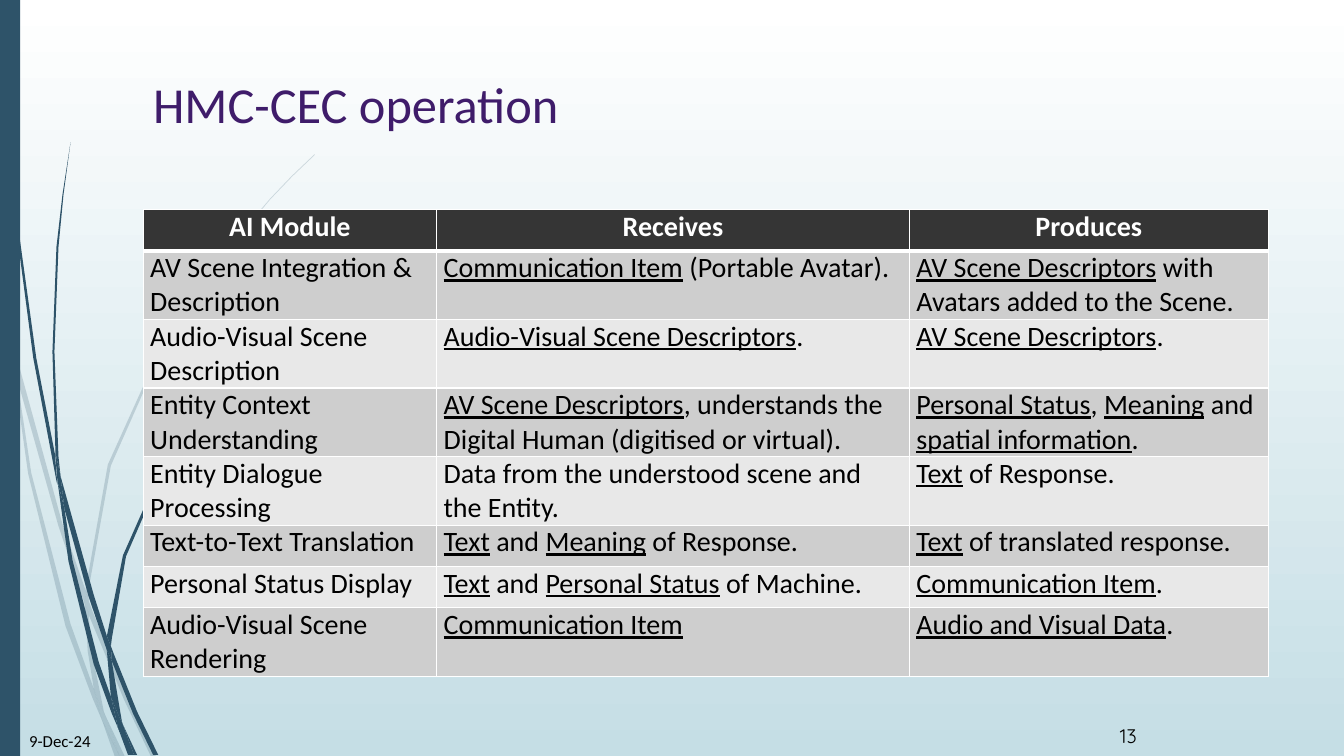
from lxml import etree
from pptx import Presentation
from pptx.dml.color import RGBColor
from pptx.enum.shapes import MSO_SHAPE
from pptx.enum.text import PP_ALIGN
from pptx.oxml.ns import qn
from pptx.util import Inches, Pt

RECTANGLE = MSO_SHAPE.RECTANGLE
LEFT, CENTER = PP_ALIGN.LEFT, PP_ALIGN.CENTER

WHITE = RGBColor(0xFF, 0xFF, 0xFF)
BLACK = RGBColor(0x00, 0x00, 0x00)
PALE_BLUE = RGBColor(0xC5, 0xDE, 0xE5)
TEAL = RGBColor(0x2E, 0x53, 0x69)
PURPLE = RGBColor(0x3F, 0x1C, 0x6A)
HEADER_GREY = RGBColor(0x35, 0x35, 0x35)
DARK_BAND = RGBColor(0xCE, 0xCE, 0xCE)
LIGHT_BAND = RGBColor(0xE8, 0xE8, 0xE8)

# Grass blade outlines, in hundredths of an inch
PALE_BLADES = [
    [(11, 350), (9, 322), (0, 282), (0, 299), (10, 344)],
    [(58, 522), (84, 599), (85, 586), (62, 520), (14, 345), (17, 376)],
    [(92, 607), (88, 596), (88, 610), (123, 694), (150, 751), (155, 751), (127, 692)],
    [(119, 751), (124, 751), (105, 711)],
    [(93, 683), (70, 619), (31, 469), (17, 376), (11, 350), (28, 470), (65, 621),
     (92, 693), (101, 714), (99, 707)],
    [(84, 599), (87, 646), (93, 683), (96, 692), (105, 711), (103, 706), (91, 646),
     (88, 610), (88, 608)],
    [(88, 584), (110, 462), (160, 349), (229, 245), (268, 198), (290, 175), (312, 154),
     (312, 153), (289, 175), (268, 197), (228, 244), (158, 348), (107, 461), (85, 584),
     (85, 586), (88, 596)],
    [(101, 714), (114, 751), (119, 751)],
    [(88, 608), (88, 610), (88, 596), (85, 586), (84, 599)],
    [(96, 692), (93, 683), (99, 707), (101, 714), (119, 751), (105, 711)],
]
DARK_BLADES = [
    [(7, 110), (17, 233), (33, 355), (56, 477), (57, 481), (55, 457), (55, 453),
     (36, 355), (19, 232), (8, 109), (5, 48), (4, 0), (3, 0), (4, 48)],
    [(88, 592), (106, 645), (106, 633), (106, 631), (93, 590), (60, 472), (64, 505)],
    [(113, 649), (110, 641), (111, 656), (132, 708), (152, 749), (157, 749), (136, 706)],
    [(110, 691), (98, 657), (72, 556), (64, 505), (57, 477), (68, 557), (93, 659),
     (111, 708), (117, 722), (116, 717)],
    [(60, 472), (58, 453), (54, 349), (58, 245), (63, 193), (70, 141), (62, 193),
     (56, 245), (52, 349), (55, 449)],
    [(133, 749), (136, 749), (122, 719)],
    [(57, 477), (64, 505), (60, 472), (55, 449), (55, 453)],
    [(111, 633), (125, 552), (158, 476), (205, 406), (231, 374), (245, 359), (261, 344),
     (260, 344), (245, 358), (231, 373), (204, 405), (156, 474), (122, 551), (106, 631),
     (110, 641)],
    [(117, 722), (127, 749), (131, 749)],
    [(106, 645), (110, 691), (116, 706), (122, 719), (121, 716), (111, 656), (109, 651)],
    [(106, 645), (109, 651), (111, 656), (110, 641), (106, 631), (106, 633)],
    [(116, 706), (110, 691), (116, 717), (117, 722), (130, 749), (133, 749), (122, 719)],
]

# Words between underscores are underlined
ROWS = [
    ("AI Module", "Receives", "Produces"),
    ("AV Scene Integration & Description", "_Communication Item_ (Portable Avatar).",
     "_AV Scene Descriptors_ with Avatars added to the Scene."),
    ("Audio-Visual Scene Description", "_Audio-Visual Scene Descriptors_.",
     "_AV Scene Descriptors_."),
    ("Entity Context Understanding",
     "_AV Scene Descriptors_, understands the Digital Human (digitised or virtual).",
     "_Personal Status_, _Meaning_ and _spatial information_."),
    ("Entity Dialogue Processing", "Data from the understood scene and the Entity.",
     "_Text_ of Response."),
    ("Text-to-Text Translation", "_Text_ and _Meaning_ of Response.",
     "_Text_ of translated response."),
    ("Personal Status Display", "_Text_ and _Personal Status_ of Machine.",
     "_Communication Item_."),
    ("Audio-Visual Scene Rendering", "_Communication Item_", "_Audio and Visual Data_."),
]
COLUMN_WIDTHS = [2.91, 4.69, 3.56]
ROW_HEIGHTS = [0.41, 0.68, 0.68, 0.68, 0.68, 0.41, 0.41, 0.68]


def style_paragraph(para, size, color, font_name="Calibri", bold=False):
    para.font.size = Pt(size)
    para.font.name = font_name
    para.font.bold = bold
    para.font.color.rgb = color


def add_border(cell, side, points):
    """Append a white border; borders go in before the cell's fill."""
    properties = cell._tc.get_or_add_tcPr()
    line = etree.SubElement(properties, qn(f"a:ln{side}"), w=str(Pt(points)))
    fill = etree.SubElement(line, qn("a:solidFill"))
    etree.SubElement(fill, qn("a:srgbClr"), val=str(WHITE))


deck = Presentation()
deck.slide_width, deck.slide_height = Inches(13.33), Inches(7.5)
page = deck.slides.add_slide(deck.slide_layouts[6])

backdrop = page.background.fill
backdrop.gradient()
backdrop.gradient_angle = 270
for stop, color in zip(backdrop.gradient_stops, (WHITE, PALE_BLUE)):
    stop.color.rgb = color

for blades, opacity in ((PALE_BLADES, 20), (DARK_BLADES, 100)):
    for outline in blades:
        builder = page.shapes.build_freeform(*outline[0], scale=Inches(0.01))
        builder.add_line_segments(outline[1:], close=True)
        blade = builder.convert_to_shape()
        blade.shadow.inherit = False
        blade.fill.solid()
        blade.fill.fore_color.rgb = TEAL
        blade.line.fill.background()
        if opacity < 100:
            tint = blade.fill._xPr.find(f".//{qn('a:srgbClr')}")
            etree.SubElement(tint, qn("a:alpha"), val=str(opacity * 1000))

side_bar = page.shapes.add_shape(RECTANGLE, 0, 0, Inches(0.2), Inches(7.5))
side_bar.shadow.inherit = False
side_bar.fill.solid()
side_bar.fill.fore_color.rgb = TEAL
side_bar.line.fill.background()

for text, left, top, width, height, inset, size, font_name, color in (
    ("HMC-CEC operation", 1.42, 0.68, 11.16, 1.4, 0.05, 36, "Calibri", PURPLE),
    ("9-Dec-24", 0.19, 7.2, 1.09, 0.4, 0.05, 12, "Calibri", BLACK),
    ("13", 11.01, 7.18, 0.61, 0.05, 0, 14, "Quicksand", BLACK),
):
    box = page.shapes.add_textbox(Inches(left), Inches(top), Inches(width), Inches(height))
    frame = box.text_frame
    frame.word_wrap = True
    frame.margin_top = frame.margin_bottom = Inches(inset)
    frame.text = text
    style_paragraph(frame.paragraphs[0], size, color, font_name)

table = page.shapes.add_table(
    len(ROWS), len(COLUMN_WIDTHS), Inches(1.42), Inches(2.08),
    Inches(sum(COLUMN_WIDTHS)), Inches(sum(ROW_HEIGHTS))).table
for column, width in zip(table.columns, COLUMN_WIDTHS):
    column.width = Inches(width)
for row, height in zip(table.rows, ROW_HEIGHTS):
    row.height = Inches(height)

for row_number, texts in enumerate(ROWS):
    is_header = row_number == 0
    band = HEADER_GREY if is_header else DARK_BAND if row_number % 2 else LIGHT_BAND
    for column_number, text in enumerate(texts):
        cell = table.cell(row_number, column_number)
        cell.margin_left = cell.margin_right = Inches(0.07)
        cell.margin_top = cell.margin_bottom = 0
        for side in "LRTB":
            is_thick = (row_number, side) in ((0, "B"), (1, "T"))
            add_border(cell, side, 3 if is_thick else 1)
        cell.fill.solid()
        cell.fill.fore_color.rgb = band
        para = cell.text_frame.paragraphs[0]
        para.alignment = CENTER if is_header else LEFT
        style_paragraph(para, 20, WHITE if is_header else BLACK, bold=is_header)
        for part_number, part in enumerate(text.split("_")):
            if part:
                span = para.add_run()
                span.text = part
                if part_number % 2:
                    span.font.underline = True

deck.save("out.pptx")
